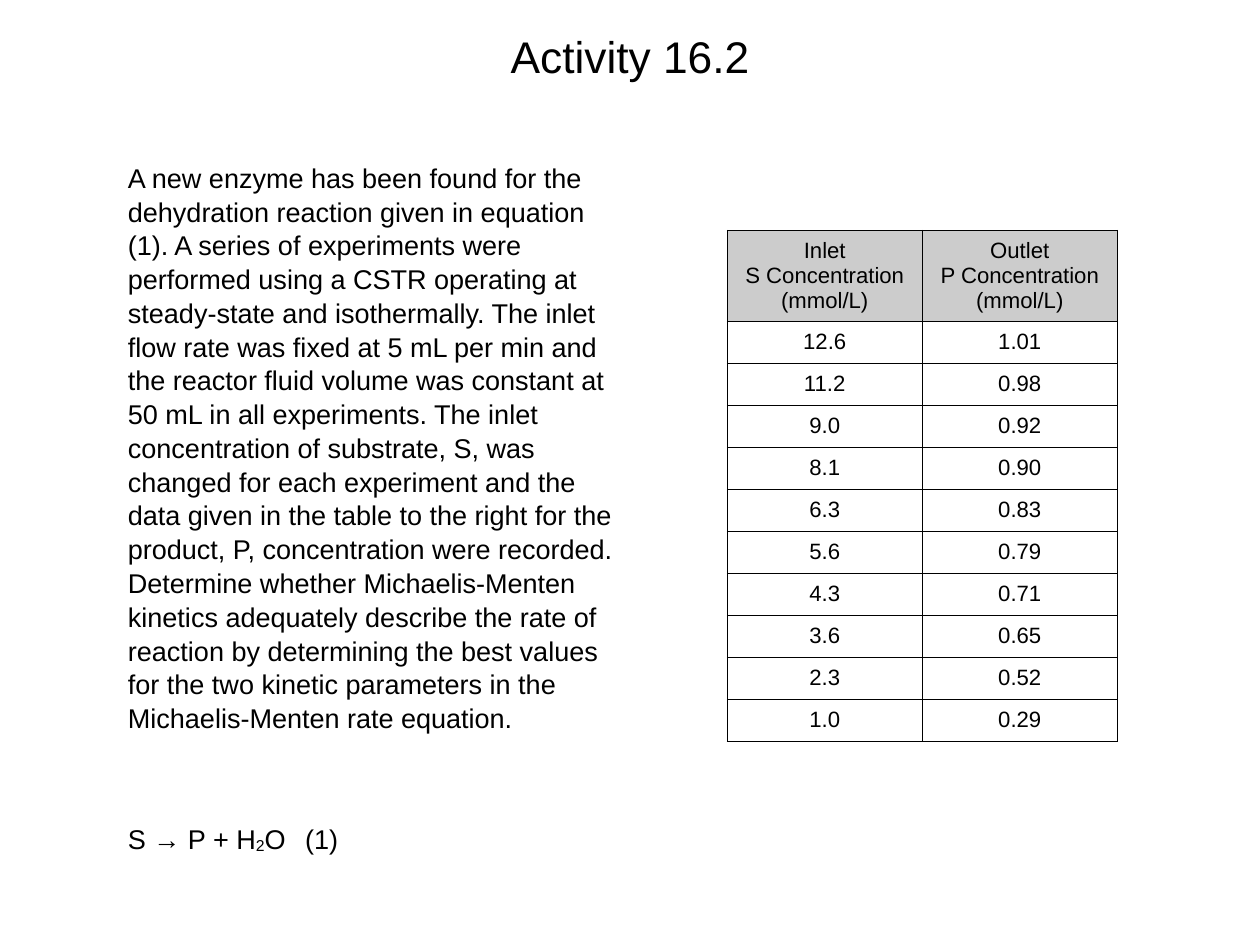
from pptx import Presentation
from pptx.dml.color import RGBColor as RGB
from pptx.enum.text import MSO_ANCHOR as ANCHOR, PP_ALIGN as ALIGN
from pptx.oxml import parse_xml
from pptx.oxml.ns import nsdecls
from pptx.util import Pt

COLS, ROWS = 1024, 768  # slide grid with one-point cells
COLORS = {"text": "000000", "border": "000000", "header": "CCCCCC"}
FONT = "Arial"
TITLE_SIZE, BODY_SIZE, TABLE_SIZE = 36, 22, 18

PROBLEM = (
    "A new enzyme has been found for the dehydration reaction given in equation (1). "
    "A series of experiments were performed using a CSTR operating at steady-state and "
    "isothermally. The inlet flow rate was fixed at 5 mL per min and the reactor fluid "
    "volume was constant at 50 mL in all experiments. The inlet concentration of "
    "substrate, S, was changed for each experiment and the data given in the table to "
    "the right for the product, P, concentration were recorded. Determine whether "
    "Michaelis-Menten kinetics adequately describe the rate of reaction by determining "
    "the best values for the two kinetic parameters in the Michaelis-Menten rate equation."
)
HEADERS = [
    ["Inlet", "S Concentration", "(mmol/L)"],
    ["Outlet", "P Concentration", "(mmol/L)"],
]
MEASUREMENTS = [
    ("12.6", "1.01"), ("11.2", "0.98"), ("9.0", "0.92"), ("8.1", "0.90"),
    ("6.3", "0.83"), ("5.6", "0.79"), ("4.3", "0.71"), ("3.6", "0.65"),
    ("2.3", "0.52"), ("1.0", "0.29"),
]


def grid(*cells):
    return [Pt(c) for c in cells]


def set_margins(box, margin):
    box.margin_left = box.margin_right = Pt(margin)
    box.margin_top = box.margin_bottom = Pt(margin)


def add_run(p, text, size, baseline=0):
    """Append a styled run; baseline is a shift in percent."""
    r = p.add_run()
    r.text = text
    r.font.name, r.font.size = FONT, Pt(size)
    r.font.color.rgb = RGB.from_string(COLORS["text"])
    if baseline:
        r.font._element.set("baseline", str(baseline * 1000))


def add_text_box(s, *cells):
    tf = s.shapes.add_textbox(*grid(*cells)).text_frame
    tf.word_wrap = True
    set_margins(tf, 4)
    return tf


def add_title(s, text):
    p = add_text_box(s, 100, 20, 824, 100).paragraphs[0]
    p.alignment = ALIGN.CENTER
    add_run(p, text, TITLE_SIZE)


def add_body(s):
    tf = add_text_box(s, 100, 126, 412, 575)
    p = tf.paragraphs[0]
    p.space_before = Pt(6)
    p.line_spacing = 1.04
    add_run(p, PROBLEM, BODY_SIZE)

    p = tf.add_paragraph()
    p.space_before = Pt(71)
    p.line_spacing = 1.04
    for text, baseline in [("S → P + H", 0), ("2", -6), ("O\t(1)", 0)]:
        add_run(p, text, BODY_SIZE, baseline)


def add_borders(cell, width=0.5):
    tc_pr = cell._tc.get_or_add_tcPr()
    for i, side in enumerate(("lnL", "lnR", "lnT", "lnB")):
        tc_pr.insert(i, parse_xml(
            f'<a:{side} {nsdecls("a")} w="{Pt(width)}"><a:solidFill>'
            f'<a:srgbClr val="{COLORS["border"]}"/></a:solidFill></a:{side}>'))


def fill_cell(cell, lines, color=None):
    set_margins(cell, 0)
    cell.vertical_anchor = ANCHOR.MIDDLE
    if color:
        cell.fill.solid()
        cell.fill.fore_color.rgb = RGB.from_string(color)
    else:
        cell.fill.background()
    p = cell.text_frame.paragraphs[0]
    p.alignment = ALIGN.CENTER
    for i, line in enumerate(lines):
        if i:
            p.add_line_break()
        add_run(p, line, TABLE_SIZE)
    add_borders(cell)


def add_measurements(s, header_height=74, row_height=34.13):
    height = header_height + row_height * len(MEASUREMENTS)
    table = s.shapes.add_table(
        len(MEASUREMENTS) + 1, len(HEADERS), *grid(591, 187, 317, height)).table
    for i, row in enumerate(table.rows):
        row.height = Pt(row_height if i else header_height)
    for j, header in enumerate(HEADERS):
        fill_cell(table.cell(0, j), header, COLORS["header"])
    for i, values in enumerate(MEASUREMENTS, 1):
        for j, value in enumerate(values):
            fill_cell(table.cell(i, j), [value])


def main():
    prs = Presentation()
    prs.slide_width, prs.slide_height = grid(COLS, ROWS)
    s = prs.slides.add_slide(prs.slide_layouts[6])
    add_title(s, "Activity 16.2")
    add_body(s)
    add_measurements(s)
    prs.save("out.pptx")


if __name__ == "__main__":
    main()
